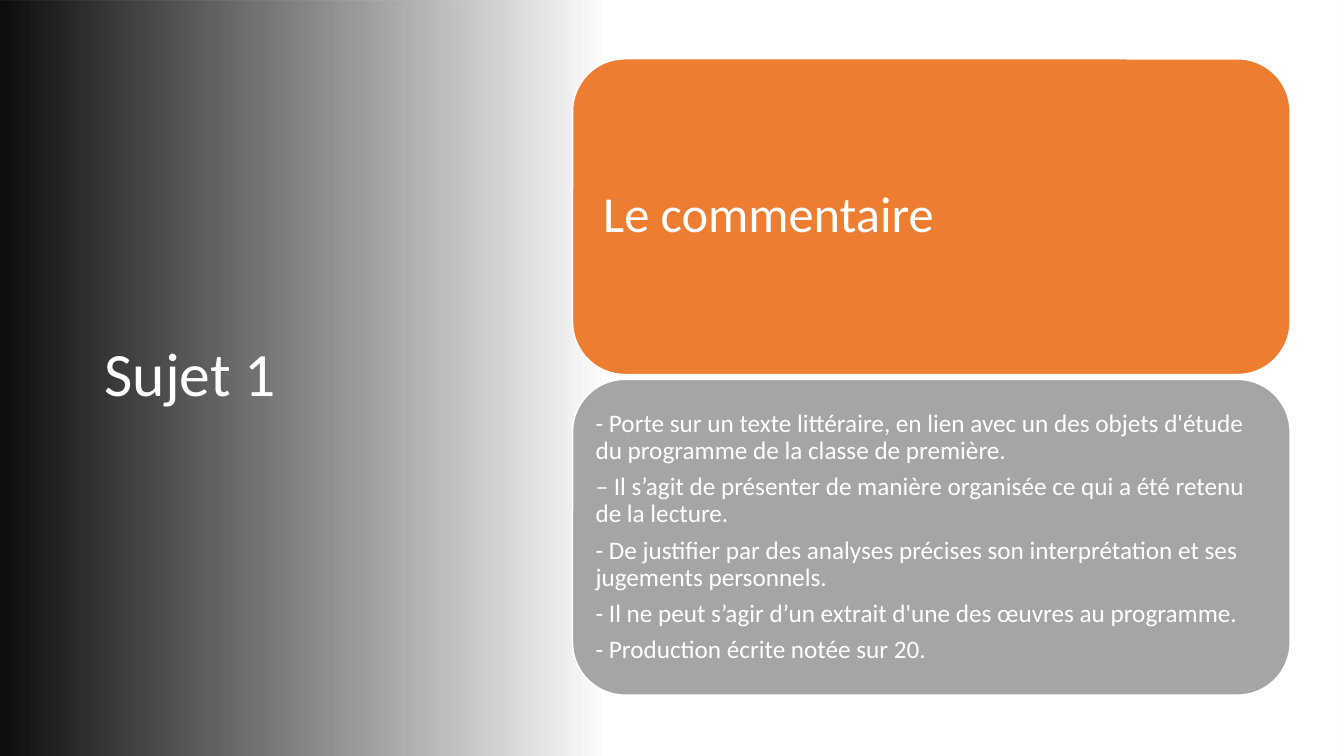
from lxml import etree
from pptx import Presentation
from pptx.dml.color import RGBColor
from pptx.enum.shapes import MSO_SHAPE
from pptx.enum.text import MSO_ANCHOR, PP_ALIGN
from pptx.oxml.ns import qn
from pptx.util import Pt

RECT, ROUND = MSO_SHAPE.RECTANGLE, MSO_SHAPE.ROUNDED_RECTANGLE
MIDDLE, LEFT = MSO_ANCHOR.MIDDLE, PP_ALIGN.LEFT
TITLE_ONLY = 5
FONT = "Calibri"
COLORS = {"dark": "0D0D0D", "white": "FFFFFF", "orange": "ED7D31", "gray": "A5A5A5"}
WIDTH, HEIGHT = 960, 540
CARD_LEFT, CARD_TOP, CARD_WIDTH, CARD_HEIGHT, CARD_PITCH = 409, 42, 512.5, 225.5, 229
CARDS = [
    ("orange", 36, 10.8, ["Le commentaire"]),
    ("gray", 18, 5.4, [
        "- Porte sur un texte littéraire, en lien avec un des objets d'étude "
        "du programme de la classe de première.",
        "– Il s’agit de présenter de manière organisée ce qui a été retenu de la lecture.",
        "- De justifier par des analyses précises son interprétation et ses "
        "jugements personnels.",
        "- Il ne peut s’agir d’un extrait d'une des œuvres au programme.",
        "- Production écrite notée sur 20.",
    ]),
]


def color(name):
    """Return the named colour."""
    return RGBColor.from_string(COLORS[name])


def write(tf, lines, size, space=0):
    """Fill a text frame with white, left-aligned paragraphs."""
    tf.word_wrap = True
    tf.vertical_anchor = MIDDLE
    for i, line in enumerate(lines):
        p = tf.paragraphs[0] if i == 0 else tf.add_paragraph()
        p.alignment = LEFT
        p.line_spacing = 0.9
        p.space_after = Pt(space)
        r = p.add_run()
        r.text = line
        r.font.name = FONT
        r.font.size = Pt(size)
        r.font.color.rgb = color("white")


def add_fade(s):
    """Cover the slide with a dark gradient that fades to clear."""
    sp = s.shapes.add_shape(RECT, 0, 0, Pt(WIDTH), Pt(HEIGHT))
    sp.shadow.inherit = False
    sp.line.fill.background()
    sp.fill.gradient()
    sp.fill.gradient_angle = 0
    for stop, position in zip(sp.fill.gradient_stops, (0, 0.45)):
        stop.position = position
        stop.color.rgb = color("dark")
    clear = sp._element.spPr.findall(".//" + qn("a:srgbClr"))[-1]
    etree.SubElement(clear, qn("a:alpha")).set("val", "0")


def set_title(s, text):
    """Place and format the title placeholder above the fade."""
    sp = s.shapes.title
    s.shapes._spTree.append(sp._element)
    sp.left, sp.top, sp.width, sp.height = Pt(67.5), Pt(80), Pt(269.5), Pt(377.5)
    write(sp.text_frame, [text], 44)


def add_card(s, top, fill, size, inset, lines):
    """Add a rounded card with its text."""
    sp = s.shapes.add_shape(ROUND, Pt(CARD_LEFT), Pt(top), Pt(CARD_WIDTH), Pt(CARD_HEIGHT))
    sp.shadow.inherit = False
    sp.fill.solid()
    sp.fill.fore_color.rgb = color(fill)
    sp.line.color.rgb = color("white")
    sp.line.width = Pt(1)
    tf = sp.text_frame
    tf.margin_left = tf.margin_right = tf.margin_top = tf.margin_bottom = Pt(inset)
    write(tf, lines, size, 0.35 * size)


def main():
    """Build and save the slide."""
    prs = Presentation()
    prs.slide_width, prs.slide_height = Pt(WIDTH), Pt(HEIGHT)
    s = prs.slides.add_slide(prs.slide_layouts[TITLE_ONLY])
    add_fade(s)
    set_title(s, "Sujet 1")
    for i, card in enumerate(CARDS):
        add_card(s, CARD_TOP + i * CARD_PITCH, *card)
    prs.save("out.pptx")


if __name__ == "__main__":
    main()
